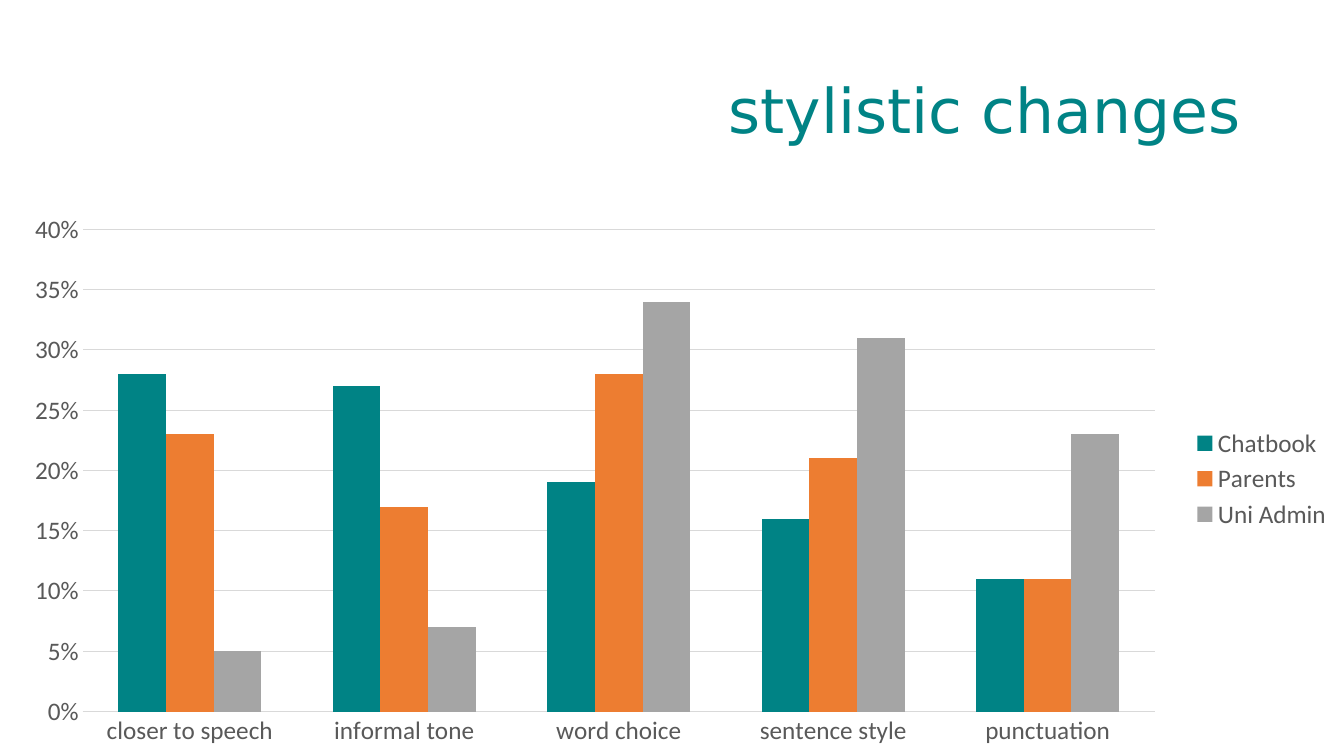
import pptx
import pptx.chart.data
import pptx.dml.color
import pptx.enum.chart
import pptx.enum.text
import pptx.oxml
import pptx.oxml.ns
import pptx.util

Pt = pptx.util.Pt
RGBColor = pptx.dml.color.RGBColor

TEAL = RGBColor(0x00, 0x83, 0x85)
ORANGE = RGBColor(0xED, 0x7D, 0x31)
GRAY = RGBColor(0xA5, 0xA5, 0xA5)
TEXT_GRAY = RGBColor(0x59, 0x59, 0x59)
LINE_GRAY = RGBColor(0xD9, 0xD9, 0xD9)

CATEGORIES = ["closer to speech", "informal tone", "word choice",
              "sentence style", "punctuation"]
SERIES = [
    ("Chatbook", [0.28, 0.27, 0.19, 0.16, 0.11], TEAL),
    ("Parents", [0.23, 0.17, 0.28, 0.21, 0.11], ORANGE),
    ("Uni Admin", [0.05, 0.07, 0.34, 0.31, 0.23], GRAY),
]
# Plot area as fractions of the chart frame
PLOT_AREA = {"x": 0.06, "y": 0.05, "w": 0.8, "h": 0.87}


def set_attrs(obj, values):
    for name, value in values.items():
        setattr(obj, name, value)


def set_font(font, name, size, color):
    set_attrs(font, {"name": name, "size": Pt(size)})
    font.color.rgb = color


def set_line(line, color):
    line.color.rgb = color
    line.width = Pt(0.75)


def add_title(slide, text):
    tf = slide.shapes.add_textbox(Pt(66), Pt(28.75), Pt(828), Pt(104.4)).text_frame
    set_attrs(tf, {"word_wrap": True,
                   "vertical_anchor": pptx.enum.text.MSO_ANCHOR.MIDDLE})
    p = tf.paragraphs[0]
    set_attrs(p, {"alignment": pptx.enum.text.PP_ALIGN.RIGHT, "line_spacing": 0.9})
    r = p.add_run()
    r.text = text
    set_font(r.font, "DejaVu Sans", 44, TEAL)


def place_plot_area(chart):
    plot_area = chart.element.find(".//" + pptx.oxml.ns.qn("c:plotArea"))
    for old in plot_area.findall(pptx.oxml.ns.qn("c:layout")):
        plot_area.remove(old)
    modes = "".join(f'<c:{k}Mode val="edge"/>' for k in "xy")
    sizes = "".join(f'<c:{k} val="{v}"/>' for k, v in PLOT_AREA.items())
    plot_area.insert(0, pptx.oxml.parse_xml(
        f'<c:layout {pptx.oxml.ns.nsdecls("c")}><c:manualLayout>'
        f'<c:layoutTarget val="inner"/>{modes}{sizes}'
        '</c:manualLayout></c:layout>'))


def add_column_chart(slide):
    data = pptx.chart.data.CategoryChartData(number_format="0%")
    data.categories = CATEGORIES
    for name, values, _ in SERIES:
        data.add_series(name, values)
    chart = slide.shapes.add_chart(
        pptx.enum.chart.XL_CHART_TYPE.COLUMN_CLUSTERED,
        Pt(1.5), Pt(144), Pt(957.5), Pt(396), data).chart
    set_attrs(chart, {"has_title": False, "has_legend": True})
    set_font(chart.font, "Calibri", 18, TEXT_GRAY)

    # Columns
    plot = chart.plots[0]
    set_attrs(plot, {"gap_width": 150, "overlap": 0, "vary_by_categories": False})
    for series, (_, _, color) in zip(plot.series, SERIES):
        series.format.fill.solid()
        series.format.fill.fore_color.rgb = color

    # Axes
    no_tick = pptx.enum.chart.XL_TICK_MARK.NONE
    for axis in (chart.category_axis, chart.value_axis):
        set_attrs(axis, {"major_tick_mark": no_tick, "minor_tick_mark": no_tick})
        set_font(axis.tick_labels.font, "Calibri", 18, TEXT_GRAY)
    set_line(chart.category_axis.format.line, LINE_GRAY)
    axis = chart.value_axis
    set_attrs(axis, {"minimum_scale": 0, "maximum_scale": 0.4, "major_unit": 0.05,
                     "has_major_gridlines": True})
    set_attrs(axis.tick_labels, {"number_format": "0%",
                                 "number_format_is_linked": False})
    axis.format.line.fill.background()
    set_line(axis.major_gridlines.format.line, LINE_GRAY)

    # Legend
    set_attrs(chart.legend, {"position": pptx.enum.chart.XL_LEGEND_POSITION.RIGHT,
                             "include_in_layout": False})
    set_font(chart.legend.font, "Calibri", 18, TEXT_GRAY)
    place_plot_area(chart)


def main():
    prs = pptx.Presentation()
    set_attrs(prs, {"slide_width": Pt(960), "slide_height": Pt(540)})
    slide = prs.slides.add_slide(prs.slide_layouts[6])
    add_title(slide, "stylistic changes")
    add_column_chart(slide)
    prs.save("out.pptx")


if __name__ == "__main__":
    main()
